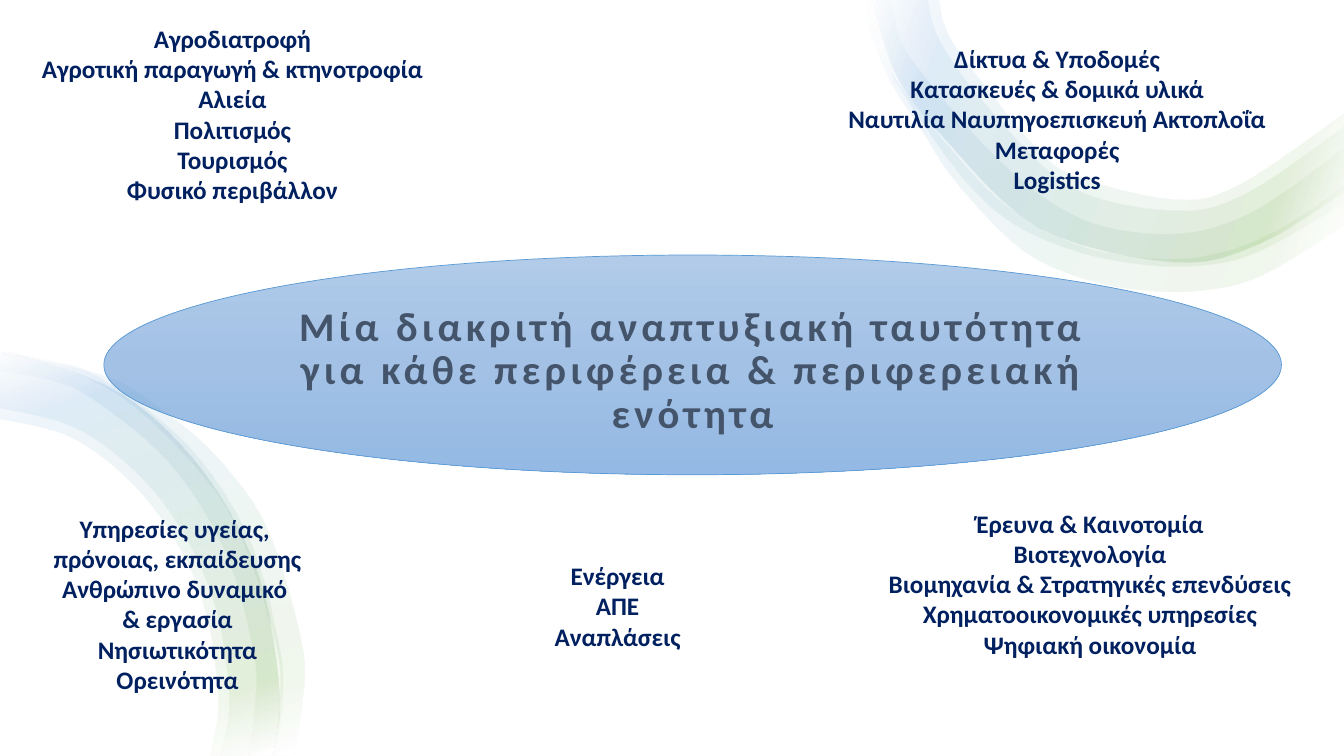
from math import sqrt

from lxml.etree import SubElement
from pptx import Presentation
from pptx.dml.color import RGBColor
from pptx.enum.shapes import MSO_SHAPE
from pptx.enum.text import MSO_ANCHOR, MSO_AUTO_SIZE, PP_ALIGN
from pptx.oxml.ns import qn
from pptx.util import Inches, Pt

# Content
PAGE = (0, 0, 13.33, 7.5)
TITLE = "Μία διακριτή αναπτυξιακή ταυτότητα για κάθε περιφέρεια & περιφερειακή ενότητα"
OVAL = (1.03, 2.53, 11.68, 2.18)
SECTORS = [  # (left, top, width, height), lines
    ((0.16, 0.18, 4.29, 2.22),
     ["Αγροδιατροφή", "Αγροτική παραγωγή & κτηνοτροφία", "Αλιεία",
      "Πολιτισμός", "Τουρισμός", "Φυσικό περιβάλλον"]),
    ((8.65, 4.99, 4.32, 1.62),
     ["Έρευνα & Καινοτομία", "Βιοτεχνολογία",
      "Βιομηχανία & Στρατηγικές επενδύσεις",
      "Χρηματοοικονομικές υπηρεσίες", "Ψηφιακή οικονομία"]),
    ((-0.38, 5.04, 4.28, 1.92),
     ["Υπηρεσίες υγείας, ", "πρόνοιας, εκπαίδευσης", "Ανθρώπινο δυναμικό ",
      "& εργασία", "Νησιωτικότητα", "Ορεινότητα"]),
    ((4.97, 5.51, 2.31, 1.01), ["Ενέργεια", "ΑΠΕ", "Αναπλάσεις"]),
    ((8.13, 0.38, 4.71, 2.22),
     ["Δίκτυα & Υποδομές", "Κατασκευές & δομικά υλικά",
      "Ναυτιλία Ναυπηγοεπισκευή Ακτοπλοΐα", "Μεταφορές", "Logistics"]),
]

# Ribbon bands: outer edge, inner edge, in inches
TOP_RIM = [(8.65, 0), (8.89, 0.75), (9.34, 1.35), (10.3, 2.26), (11.64, 2.6),
           (12.48, 2.42), (13.33, 1.9)]
TOP_RIBBON = [
    ([(8.6, 0), (8.63, 0.28), (8.84, 0.82), (9.15, 1.3), (9.47, 1.79), (10.09, 2.44),
      (10.65, 2.73), (11.27, 2.87), (11.91, 2.88), (12.53, 2.72), (13.33, 2.23)],
     [(8.64, 0), (8.75, 0.54), (9.06, 1.02), (9.43, 1.47), (9.81, 1.89), (10.25, 2.22),
      (10.76, 2.45), (11.3, 2.55), (11.86, 2.55), (12.39, 2.41), (12.88, 2.15),
      (13.33, 1.83)]),
    ([(8.65, 0), (8.7, 0.38), (8.86, 0.77), (9.23, 1.34), (9.66, 1.9), (10.13, 2.27),
      (10.69, 2.5), (11.27, 2.62), (11.87, 2.64), (12.47, 2.5), (13.33, 2.01)],
     [(8.83, 0), (8.94, 0.43), (9.24, 0.85), (9.6, 1.27), (9.96, 1.64), (10.35, 1.96),
      (10.8, 2.2), (11.31, 2.31), (11.83, 2.3), (12.31, 2.15), (12.75, 1.89),
      (13.33, 1.46)]),
    (TOP_RIM,
     [(9.2, 0), (9.32, 0.41), (9.79, 1.06), (10.61, 1.85), (11.64, 2.09),
      (12.35, 1.92), (13.33, 1.25)]),
    (TOP_RIM,
     [(9.31, 0), (9.42, 0.38), (9.88, 1), (10.25, 1.44), (10.64, 1.74), (11.64, 1.98),
      (12.29, 1.83), (13.33, 1.12)]),
]
LOW_RIM = [(0, 3.52), (0.22, 3.53), (1.22, 3.92), (2.03, 4.7), (2.57, 5.73),
           (2.77, 6.89), (2.7, 7.5)]
LOW_RIBBON = [
    (LOW_RIM,
     [(0, 4.16), (0.76, 4.37), (1.48, 4.99), (1.98, 5.88), (2.16, 6.89), (2.08, 7.5)]),
    (LOW_RIM,
     [(0, 4.05), (0.81, 4.28), (1.56, 4.92), (2.08, 5.85), (2.27, 6.89), (2.18, 7.5)]),
    ([(0, 3.52), (0.48, 3.58), (0.99, 3.75), (1.86, 4.42), (2.47, 5.35), (2.77, 6.45),
      (2.79, 7.02), (2.72, 7.5)],
     [(0, 3.69), (0.43, 3.76), (0.9, 3.95), (1.68, 4.6), (2.23, 5.48), (2.51, 6.48),
      (2.52, 7.01), (2.46, 7.5)]),
    ([(0, 3.5), (0.96, 3.71), (1.47, 3.97), (2.14, 4.53), (2.65, 5.26), (2.99, 6.42),
      (2.98, 7.03), (2.89, 7.5)],
     [(0, 3.53), (0.42, 3.59), (0.93, 3.79), (1.39, 4.09), (2.02, 4.74), (2.41, 5.39),
      (2.74, 6.45), (2.76, 7.01), (2.7, 7.5)]),
]
RIBBONS = [(TOP_RIBBON, 200), (LOW_RIBBON, 250)]  # bands, gradient angle

COLORS = {"page": "FFFFFF", "title": "44546A", "sector": "002060", "outline": "5B9BD5",
          "green": "70AD47", "blue": "5B9BD5",
          "oval_top": "B1CBE9", "oval_middle": "A3C1E5", "oval_bottom": "93B9E4"}
OVAL_STOPS = [(0, "oval_top"), (50, "oval_middle"), (100, "oval_bottom")]
RIBBON_STOPS = [(2, "page"), (16, "green"), (85, "blue"), (100, "page")]
FONT = "Calibri"
UNITS = 1000  # outline units per inch


def rgb(name):
    return RGBColor.from_string(COLORS[name])


def set_gradient(shape, stops, angle, opacity=100):
    shape.fill.background()
    blank = shape._element.spPr.find(qn("a:noFill"))
    gradient = blank.makeelement(qn("a:gradFill"), {"rotWithShape": "1"})
    stop_list = SubElement(gradient, qn("a:gsLst"))
    for position, name in stops:
        stop = SubElement(stop_list, qn("a:gs"), pos=str(position * 1000))
        color = SubElement(stop, qn("a:srgbClr"), val=COLORS[name])
        if opacity < 100:
            SubElement(color, qn("a:alpha"), val=str(opacity * 1000))
    SubElement(gradient, qn("a:lin"), ang=str(angle * 60000), scaled="0")
    blank.getparent().replace(blank, gradient)


def smooth_edge(points, steps=6):
    """Catmull-Rom curve through the points."""
    padded = [points[0], *points, points[-1]]
    curve = []
    for a, b, c, d in zip(padded, padded[1:], padded[2:], padded[3:]):
        for t in (step / steps for step in range(steps)):
            curve.append(tuple(
                (2 * q + (r - p) * t + (2 * p - 5 * q + 4 * r - s) * t**2
                 + (3 * q - p - 3 * r + s) * t**3) / 2
                for p, q, r, s in zip(a, b, c, d)))
    return curve + [points[-1]]


def format_text(paragraph, size, color):
    paragraph.alignment = PP_ALIGN.CENTER
    font = paragraph.font
    font.name, font.size, font.bold = FONT, Pt(size), True
    font.color.rgb = rgb(color)


def add_behind_title(slide, kind, box):
    shape = slide.shapes.add_shape(kind, *map(Inches, box))
    shape.shadow.inherit = False
    slide.shapes.title._element.addprevious(shape._element)
    return shape


def add_title(slide):
    page = add_behind_title(slide, MSO_SHAPE.RECTANGLE, PAGE)
    page.fill.solid()
    page.fill.fore_color.rgb = rgb("page")
    page.line.fill.background()
    oval = add_behind_title(slide, MSO_SHAPE.OVAL, OVAL)
    set_gradient(oval, OVAL_STOPS, 90)
    oval.line.color.rgb = rgb("outline")
    oval.line.width = Pt(0.5)

    # The title fills the rectangle inscribed in the oval
    title = slide.shapes.title
    title.width, title.height = (int(side / sqrt(2)) for side in (oval.width, oval.height))
    title.left = oval.left + (oval.width - title.width) // 2
    title.top = oval.top + (oval.height - title.height) // 2
    frame = title.text_frame
    frame.text = TITLE
    frame.word_wrap = True
    frame.auto_size = MSO_AUTO_SIZE.NONE
    frame.vertical_anchor = MSO_ANCHOR.BOTTOM
    paragraph = frame.paragraphs[0]
    format_text(paragraph, 29, "title")
    paragraph.line_spacing = 0.9
    paragraph.space_before, paragraph.space_after = Pt(0), Pt(6)
    paragraph.runs[0].font._element.set("spc", "300")


def add_band(slide, outer, inner, angle):
    outline = [(x * UNITS, y * UNITS)
               for x, y in smooth_edge(outer) + smooth_edge(inner)[::-1]]
    builder = slide.shapes.build_freeform(*outline[0], scale=Inches(1) / UNITS)
    builder.add_line_segments(outline[1:], close=True)
    band = builder.convert_to_shape()
    set_gradient(band, RIBBON_STOPS, angle, opacity=10)
    band.line.fill.background()
    band.shadow.inherit = False


def add_sector(slide, box, lines):
    frame = slide.shapes.add_textbox(*map(Inches, box)).text_frame
    frame.word_wrap = True
    frame.auto_size = MSO_AUTO_SIZE.SHAPE_TO_FIT_TEXT
    frame.text = "\n".join(lines)
    for paragraph in frame.paragraphs:
        format_text(paragraph, 18, "sector")


def main():
    deck = Presentation()
    deck.slide_width, deck.slide_height = map(Inches, PAGE[2:])
    slide = deck.slides.add_slide(deck.slide_layouts[5])
    add_title(slide)
    for bands, angle in RIBBONS:
        for outer, inner in bands:
            add_band(slide, outer, inner, angle)
    for box, lines in SECTORS:
        add_sector(slide, box, lines)
    deck.save("out.pptx")


if __name__ == "__main__":
    main()
